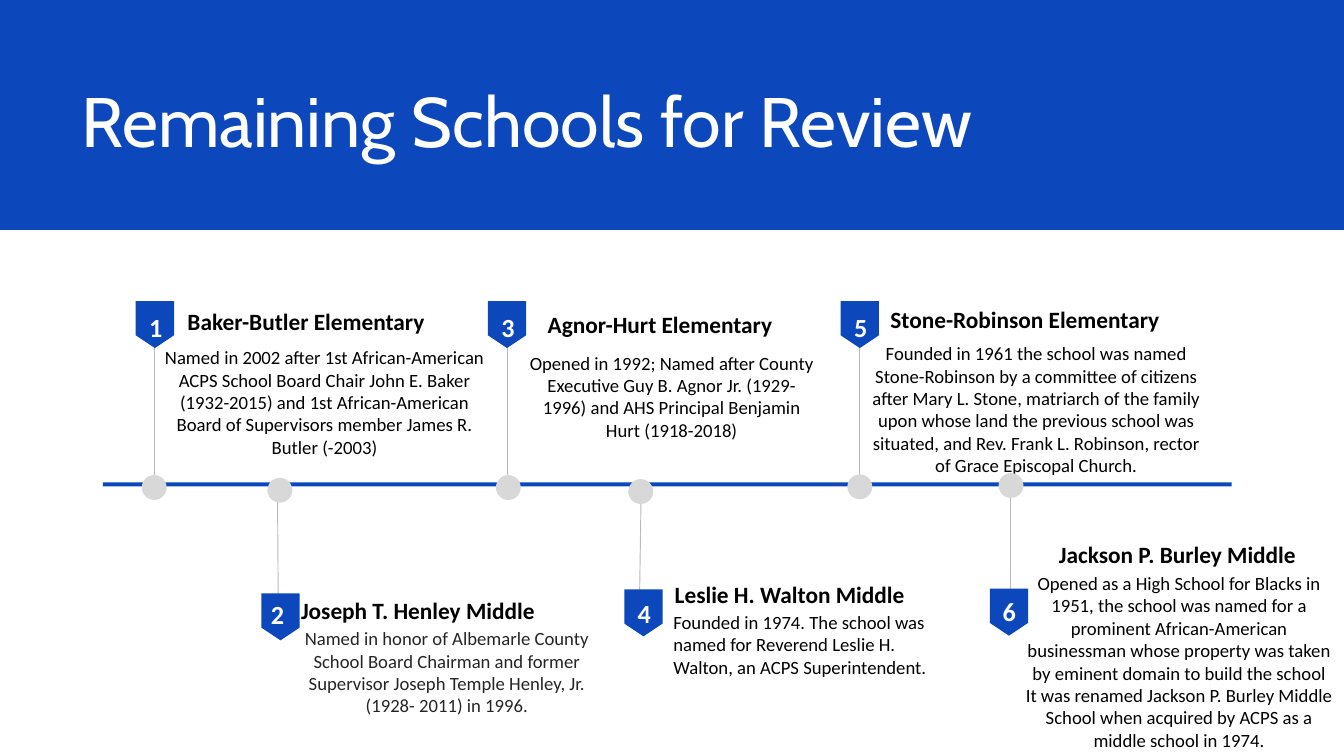
"""Build the timeline slide of schools that remain for review."""

from dataclasses import dataclass

from lxml.etree import SubElement
from pptx import Presentation
from pptx.dml.color import RGBColor
from pptx.enum.shapes import MSO_CONNECTOR, MSO_SHAPE
from pptx.enum.text import MSO_ANCHOR, MSO_AUTO_SIZE, PP_ALIGN as Align
from pptx.oxml.ns import qn
from pptx.shapes.autoshape import Shape
from pptx.slide import Slide
from pptx.util import Inches, Pt

BLUE = RGBColor(0x0C, 0x48, 0xBB)
GREY = RGBColor(0xD8, 0xD8, 0xD8)
STEM_GREY = RGBColor(0xB5, 0xBB, 0xBF)
WHITE = RGBColor(0xFF, 0xFF, 0xFF)
BLACK = RGBColor(0x00, 0x00, 0x00)
CHARCOAL = RGBColor(0x25, 0x25, 0x25)

BADGE_WIDTH, BADGE_SIDE, BADGE_HEIGHT = 0.57, 0.51, 0.7
DOT_SIZE = 0.37

Point = tuple[float, float]
Box = tuple[float, float, float, float]


@dataclass(frozen=True)
class Style:
    size: float
    color: RGBColor = BLACK
    font: str = "Calibri"
    bold: bool = False
    align: Align = Align.LEFT
    spacing: float = 1.0


@dataclass(frozen=True)
class School:
    number: int
    name: str
    story: str
    badge: Point
    digit: Point
    name_box: Box
    story_box: Box
    stem: tuple[Point, Point]
    dot: Point
    name_align: Align = Align.LEFT
    story_align: Align = Align.CENTER
    story_color: RGBColor = BLACK


SCHOOLS = [
    School(1, "Baker-Butler Elementary",
           "Named in 2002 after 1st African-American ACPS School Board Chair John E. Baker "
           "(1932-2015) and 1st African-American Board of Supervisors member James R. "
           "Butler (-2003)",
           (2.02, 4.48), (2.22, 4.49), (2.79, 4.44, 4.9, 0.55), (2.38, 5.15, 4.9, 1.77),
           ((2.3, 5.09), (2.3, 7.13)), (2.11, 7.07)),
    School(2, "Joseph T. Henley Middle",
           "Named in honor of Albemarle County School Board Chairman and former Supervisor "
           "Joseph Temple Henley, Jr. (1928- 2011) in 1996.",
           (3.89, 8.83), (4.03, 8.77), (4.48, 8.74, 4.44, 0.42), (4.43, 9.33, 4.44, 1.35),
           ((4.13, 7.38), (4.14, 8.87)), (3.98, 7.11), story_color=CHARCOAL),
    School(3, "Agnor-Hurt Elementary",
           "Opened in 1992; Named after County Executive Guy B. Agnor Jr. (1929-1996) and "
           "AHS Principal Benjamin Hurt (1918-2018)",
           (7.26, 4.48), (7.46, 4.49), (8.15, 4.49, 4.29, 0.42), (7.85, 5.23, 4.29, 1.38),
           ((7.55, 5.17), (7.55, 7.21)), (7.38, 7.07)),
    School(4, "Leslie H. Walton Middle",
           "Founded in 1974. The school was named for Reverend Leslie H. Walton, an ACPS "
           "Superintendent.",
           (9.29, 8.77), (9.49, 8.75), (10.04, 8.51, 4.78, 0.42), (10.02, 9.09, 3.87, 1.01),
           ((9.54, 7.38), (9.51, 9.39)), (9.35, 7.13), story_align=Align.LEFT),
    School(5, "Stone-Robinson Elementary",
           "Founded in 1961 the school was named Stone-Robinson by a committee of citizens "
           "after Mary L. Stone, matriarch of the family upon whose land the previous school "
           "was situated, and Rev. Frank L. Robinson, rector of Grace Episcopal Church.",
           (12.51, 4.48), (12.71, 4.49), (13.25, 4.42, 4.78, 0.42), (12.9, 5.09, 5.04, 2.02),
           ((12.79, 5.17), (12.79, 7.21)), (12.61, 7.06)),
    School(6, "Jackson P. Burley Middle",
           "Opened as a High School for Blacks in 1951, the school was named for a prominent "
           "African-American businessman whose property was taken by eminent domain to build "
           "the school\vIt was renamed Jackson P. Burley Middle School when acquired by ACPS "
           "as a middle school in 1974.",
           (14.73, 8.76), (14.92, 8.72), (15.24, 7.91, 4.56, 0.55), (15.24, 8.51, 4.61, 2.69),
           ((15.04, 7.26), (15.04, 8.77)), (14.86, 7.04), name_align=Align.CENTER),
]


def fill_plain(shape: Shape, color: RGBColor) -> None:
    """Give the shape a flat fill without line or shadow."""
    shape.fill.solid()
    shape.fill.fore_color.rgb = color
    shape.line.fill.background()
    shape.shadow.inherit = False


def add_preset(slide: Slide, kind: MSO_SHAPE, box: Box, color: RGBColor) -> Shape:
    """Add a plain preset shape."""
    shape = slide.shapes.add_shape(kind, *map(Inches, box))
    fill_plain(shape, color)
    return shape


def write(shape: Shape, text: str, style: Style) -> None:
    """Write one paragraph into the shape without insets."""
    frame = shape.text_frame
    frame.text = text
    frame.word_wrap = True
    frame.auto_size = MSO_AUTO_SIZE.NONE
    frame.vertical_anchor = MSO_ANCHOR.TOP
    frame.margin_left = frame.margin_right = frame.margin_top = frame.margin_bottom = 0
    paragraph = frame.paragraphs[0]
    paragraph.alignment = style.align
    paragraph.line_spacing = style.spacing
    for run in paragraph.runs:
        run.font.name = style.font
        run.font.size = Pt(style.size)
        run.font.bold = style.bold
        run.font.color.rgb = style.color


def add_text(slide: Slide, box: Box, text: str, style: Style) -> None:
    """Add a text box."""
    write(slide.shapes.add_textbox(*map(Inches, box)), text, style)


def add_stem(slide: Slide, start: Point, end: Point) -> None:
    """Add the thin line between a badge and the timeline."""
    stem = slide.shapes.add_connector(MSO_CONNECTOR.STRAIGHT, *map(Inches, start + end))
    stem.line.color.rgb = STEM_GREY
    stem.line.width = Pt(1)
    SubElement(stem.element.spPr, qn("a:effectLst"))


def add_badge(slide: Slide, left: float, top: float) -> None:
    """Add a badge with a pointed lower edge."""
    right, side = left + BADGE_WIDTH, top + BADGE_SIDE
    tip = (left + BADGE_WIDTH / 2, top + BADGE_HEIGHT)
    builder = slide.shapes.build_freeform(Inches(left), Inches(top))
    corners = [(left, side), tip, (right, side), (right, top)]
    builder.add_line_segments([(Inches(x), Inches(y)) for x, y in corners])
    fill_plain(builder.convert_to_shape(), BLUE)


def add_school(slide: Slide, school: School) -> None:
    """Add the stem, badge and texts of one school."""
    add_stem(slide, *school.stem)
    add_badge(slide, *school.badge)
    add_text(slide, (*school.digit, 0.23, 0.48), str(school.number),
             Style(28, WHITE, bold=True, spacing=1.3))
    add_text(slide, school.name_box, school.name,
             Style(25, bold=True, align=school.name_align, spacing=1.3))
    add_text(slide, school.story_box, school.story,
             Style(20, school.story_color, align=school.story_align))


def add_header(slide: Slide) -> None:
    """Add the blue banner behind the slide title."""
    banner = add_preset(slide, MSO_SHAPE.RECTANGLE, (0, 0, 20, 3.42), BLUE)
    title = slide.shapes.title
    title.element.addprevious(banner.element)
    title.left, title.top, title.width, title.height = map(Inches, (1.21, 0.91, 18.31, 1.26))
    write(title, "Remaining Schools for Review", Style(75, WHITE, "Cabin", spacing=1.2))


def main() -> None:
    """Build and save the presentation."""
    presentation = Presentation()
    presentation.slide_width, presentation.slide_height = Inches(20), Inches(11.25)
    slide = presentation.slides.add_slide(presentation.slide_layouts[5])
    add_header(slide)
    add_preset(slide, MSO_SHAPE.RECTANGLE, (1.53, 7.18, 16.8, 0.06), BLUE)
    for school in SCHOOLS:
        add_school(slide, school)
    for school in SCHOOLS:
        add_preset(slide, MSO_SHAPE.OVAL, (*school.dot, DOT_SIZE, DOT_SIZE), GREY)
    presentation.save("out.pptx")


if __name__ == "__main__":
    main()
